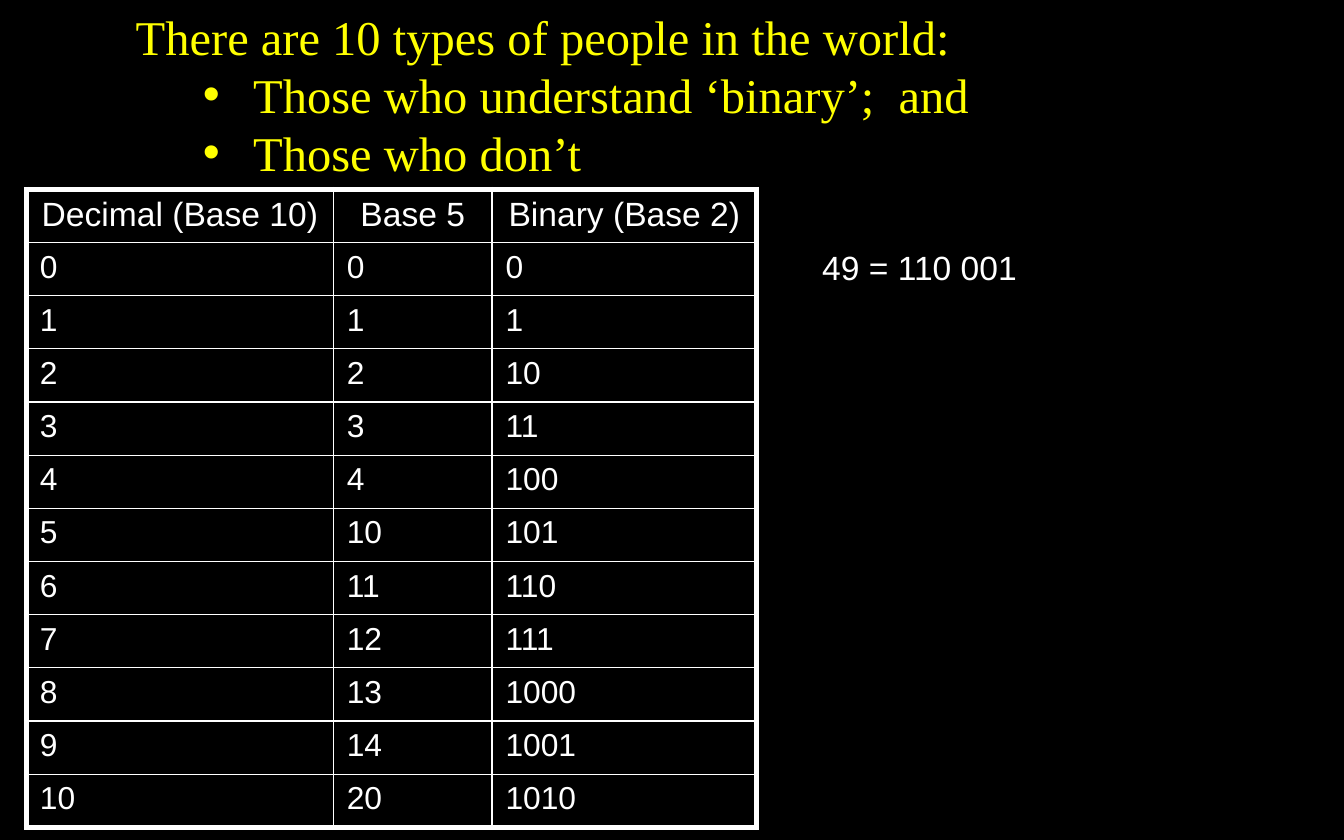
import pptx
import pptx.util
import pptx.dml.color
import pptx.enum.text
import pptx.oxml
import pptx.oxml.ns
import lxml.etree

Cm, Pt = pptx.util.Cm, pptx.util.Pt
PP_ALIGN = pptx.enum.text.PP_ALIGN


def rgb(value):
    return pptx.dml.color.RGBColor.from_string(value)


def style(p, name, size, color):
    for r in p.runs:
        r.font.name = name
        r.font.size = Pt(size)
        r.font.bold = False
        r.font.color.rgb = rgb(color)


prs = pptx.Presentation()
prs.slide_width, prs.slide_height = Cm(25.4), Cm(15.88)
s = prs.slides.add_slide(prs.slide_layouts[5])
s.background.fill.solid()
s.background.fill.fore_color.rgb = rgb("000000")

title = s.shapes.title
title.left, title.top, title.width, title.height = Cm(2.31), Cm(0), Cm(16.41), Cm(3.58)
tf = title.text_frame
tf.text = "There are 10 types of people in the world:\nThose who understand ‘binary’;  and\nThose who don’t"
tf.word_wrap = True
tf.auto_size = pptx.enum.text.MSO_AUTO_SIZE.NONE
tf.vertical_anchor = pptx.enum.text.MSO_ANCHOR.TOP
for i, p in enumerate(tf.paragraphs):
    p.alignment = PP_ALIGN.LEFT
    if i > 0:
        pPr = p._p.get_or_add_pPr()
        pPr.set("marL", str(Cm(2.22)))
        pPr.set("indent", str(Cm(-0.95)))
        font = lxml.etree.SubElement(pPr, pptx.oxml.ns.qn("a:buFont"))
        font.set("typeface", "Arial")
        bullet = lxml.etree.SubElement(pPr, pptx.oxml.ns.qn("a:buChar"))
        bullet.set("char", "•")
    style(p, "Times New Roman", 26, "FFFF00")

rows = [("Decimal (Base 10)", "Base 5", "Binary (Base 2)")]
rows += zip(
    "0 1 2 3 4 5 6 7 8 9 10".split(),
    "0 1 2 3 4 10 11 12 13 14 20".split(),
    "0 1 10 11 100 101 110 111 1000 1001 1010".split(),
)
widths = [5.8, 3, 5]
last_row, last_col = len(rows) - 1, len(widths) - 1
table = s.shapes.add_table(
    len(rows), len(widths), Cm(0.5), Cm(3.58), Cm(sum(widths)), Cm(12.06)
).table
table.first_row = table.horz_banding = False
for col, width in zip(table.columns, widths):
    col.width = Cm(width)

for i, values in enumerate(rows):
    for j, value in enumerate(values):
        cell = table.cell(i, j)
        cell.text = value
        p = cell.text_frame.paragraphs[0]
        p.alignment = PP_ALIGN.CENTER if i == 0 else PP_ALIGN.LEFT
        style(p, "Arial", 18 if i == 0 else 17, "FFFFFF")
        tcPr = cell._tc.get_or_add_tcPr()
        outer = {"L": j == 0, "R": j == last_col, "T": i == 0, "B": i == last_row}
        for side, thick in outer.items():
            ln = lxml.etree.SubElement(tcPr, pptx.oxml.ns.qn(f"a:ln{side}"))
            ln.set("w", str(Pt(3 if thick else 0.75)))
            fill = lxml.etree.SubElement(ln, pptx.oxml.ns.qn("a:solidFill"))
            lxml.etree.SubElement(fill, pptx.oxml.ns.qn("a:srgbClr")).set("val", "FFFFFF")
        cell.fill.background()

example = s.shapes.add_textbox(Cm(15.29), Cm(4.55), Cm(8.2), Cm(1.02))
tf = example.text_frame
tf.word_wrap = True
tf.text = "49 = 110 001"
style(tf.paragraphs[0], "Arial", 18, "FFFFFF")

prs.save("out.pptx")
